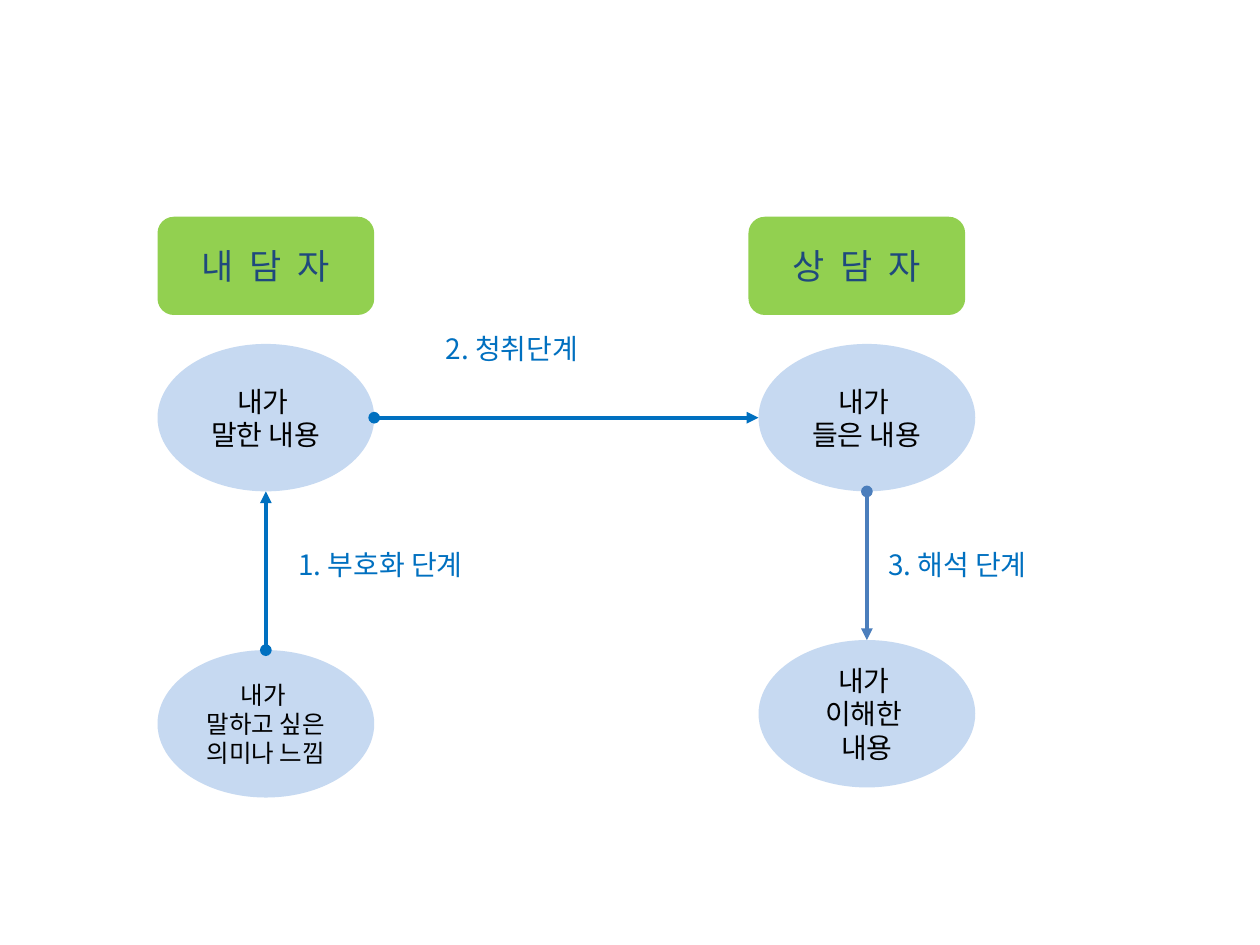
from lxml import etree
from pptx import Presentation
from pptx.dml.color import RGBColor
from pptx.enum import shapes, text
from pptx.oxml.ns import qn
from pptx.util import Inches, Pt

FONT = "Noto Sans CJK KR"
BLUE = "0070C0"
CLIENT_X, COUNSELOR_X = 1.25, 6.02
NODE_W, NODE_H = 1.72, 1.17
SPOKEN_Y, MEANT_Y, UNDERSTOOD_Y = 2.73, 5.16, 5.08


def rgb(value):
    return RGBColor.from_string(value)


def write(sp, content, size=16, color="000000", align=text.PP_ALIGN.LEFT,
          anchor=text.MSO_ANCHOR.TOP):
    tf = sp.text_frame
    tf.word_wrap = True
    tf.vertical_anchor = anchor
    tf.text = content
    for p in tf.paragraphs:
        p.alignment = align
        for r in p.runs:
            r.font.size = Pt(size)
            r.font.name = FONT
            r.font.color.rgb = rgb(color)
            ea = etree.SubElement(r.font._element, qn("a:ea"))
            ea.set("typeface", FONT)


def add_node(s, kind, x, y, h, fill, content, **fmt):
    sp = s.shapes.add_shape(kind, Inches(x), Inches(y), Inches(NODE_W), Inches(h))
    sp.shadow.inherit = False
    sp.fill.solid()
    sp.fill.fore_color.rgb = rgb(fill)
    sp.line.fill.background()
    write(sp, content, align=text.PP_ALIGN.CENTER,
          anchor=text.MSO_ANCHOR.MIDDLE, **fmt)


def add_role(s, x, content):
    add_node(s, shapes.MSO_SHAPE.ROUNDED_RECTANGLE, x, 1.72, 0.78, "92D050",
             content, size=20, color="1F497D")


def add_message(s, x, y, content, **fmt):
    add_node(s, shapes.MSO_SHAPE.OVAL, x, y, NODE_H, "C6D9F1", content, **fmt)


def add_arrow(s, x1, y1, x2, y2, color=BLUE):
    cx = s.shapes.add_connector(shapes.MSO_CONNECTOR.STRAIGHT, Inches(x1),
                                Inches(y1), Inches(x2), Inches(y2))
    cx.line.color.rgb = rgb(color)
    cx.line.width = Pt(2.25)
    ln = cx.line._get_or_add_ln()
    for tag, end in (("a:headEnd", "oval"), ("a:tailEnd", "triangle")):
        etree.SubElement(ln, qn(tag)).set("type", end)
    etree.SubElement(cx._element.spPr, qn("a:effectLst"))


def add_label(s, x, y, content):
    sp = s.shapes.add_textbox(Inches(x), Inches(y), Inches(2.27), Inches(0.37))
    write(sp, content, color=BLUE)
    sp.text_frame.auto_size = text.MSO_AUTO_SIZE.SHAPE_TO_FIT_TEXT


def main():
    prs = Presentation()
    prs.slide_width, prs.slide_height = Inches(10), Inches(7.5)
    s = prs.slides.add_slide(prs.slide_layouts[6])

    add_role(s, CLIENT_X, "내  담  자")
    add_role(s, 5.94, "상  담  자")

    add_message(s, CLIENT_X, SPOKEN_Y, "내가 \n말한 내용")
    add_message(s, CLIENT_X, MEANT_Y, "내가 \n말하고 싶은 의미나 느낌", size=14)
    add_message(s, COUNSELOR_X, SPOKEN_Y, "내가 \n들은 내용")
    add_message(s, COUNSELOR_X, UNDERSTOOD_Y, "내가 \n이해한 \n내용")

    client_mid = CLIENT_X + NODE_W / 2
    counselor_mid = COUNSELOR_X + NODE_W / 2
    spoken_mid = SPOKEN_Y + NODE_H / 2
    spoken_bottom = SPOKEN_Y + NODE_H
    add_arrow(s, client_mid, MEANT_Y, client_mid, spoken_bottom)
    add_arrow(s, CLIENT_X + NODE_W, spoken_mid, COUNSELOR_X, spoken_mid)
    add_arrow(s, counselor_mid, spoken_bottom, counselor_mid, UNDERSTOOD_Y, "4B7EBC")

    add_label(s, 2.27, 4.3, "1. 부호화 단계")
    add_label(s, 3.44, 2.58, "2. 청취단계")
    add_label(s, 6.95, 4.3, "3. 해석 단계")

    prs.save("out.pptx")


if __name__ == "__main__":
    main()
